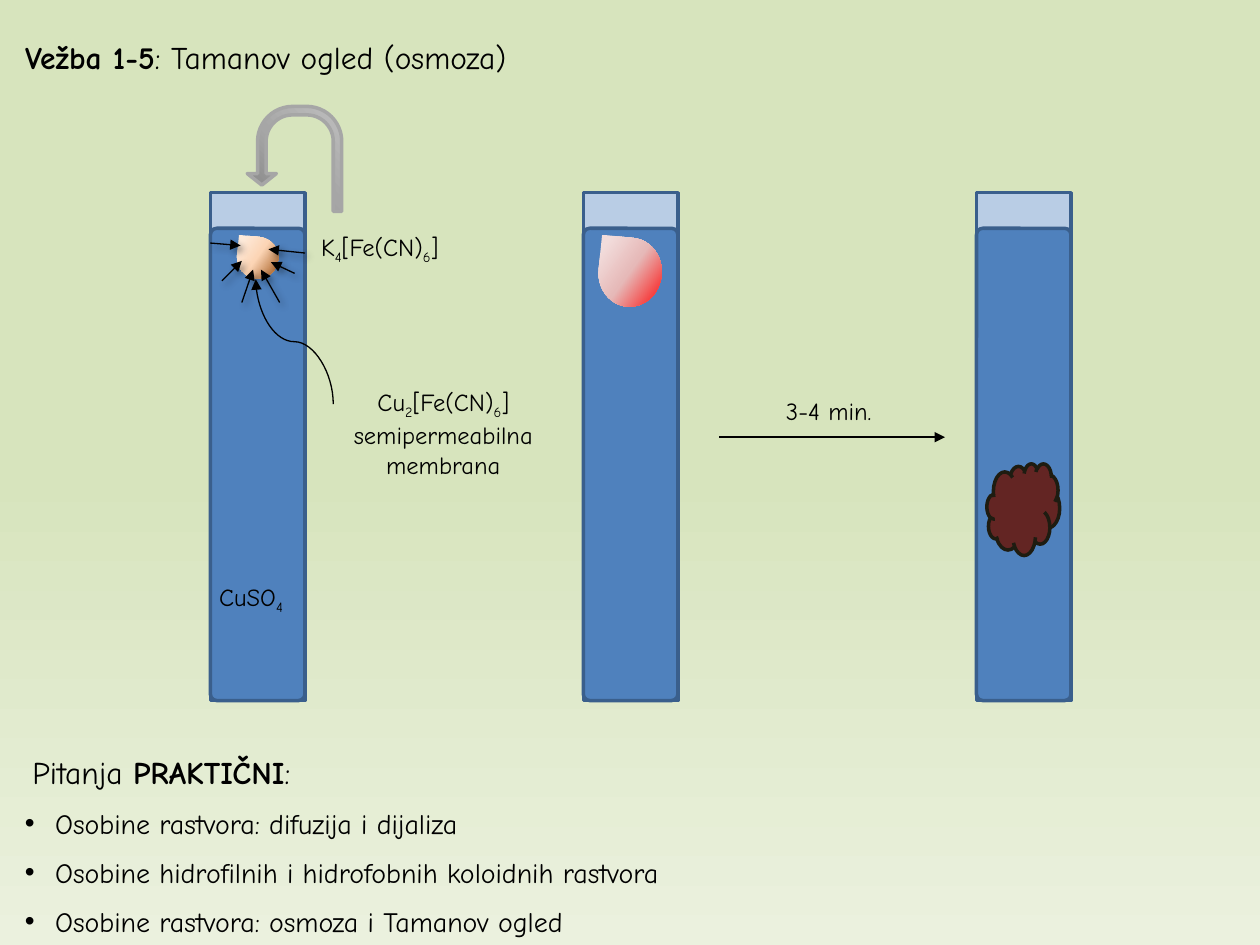
from dataclasses import dataclass

from lxml.etree import SubElement
from pptx import Presentation
from pptx.dml.color import RGBColor
from pptx.enum.shapes import MSO_CONNECTOR, MSO_SHAPE
from pptx.enum.text import MSO_ANCHOR, MSO_AUTO_SIZE, PP_ALIGN
from pptx.oxml.ns import qn
from pptx.util import Inches, Pt


@dataclass(frozen=True)
class Theme:
    """Colours, type sizes and line widths of the slide."""
    font: str = "Comic Neue"
    ink: str = "000000"
    heading: int = 18
    body: int = 16
    label: int = 14
    glass: str = "B9CDE5"
    liquid: str = "4F81BD"
    tube_line: str = "3A5F8C"
    clot: str = "632523"
    clot_line: str = "1E1C11"
    arrow_line: str = "A6A6A6"
    outline: float = 2
    thin: float = 0.75
    background: tuple = ((0, "EBF1DE"), (50, "D7E4BD"), (100, "D7E4BD"))
    fresh_drop: tuple = ((14, "FDEADA"), (50, "FCD5B5"), (100, "984807"))
    swollen_drop: tuple = ((14, "F2DCDB"), (50, "E6B9B8"), (100, "FF0000"))
    bent_arrow: tuple = ((0, "BFBFBF"), (50, "A6A6A6"), (100, "808080"))


THEME = Theme()
CELL = 0.25


@dataclass(frozen=True)
class Box:
    """A rectangle measured in cells of a 40 by 30 slide grid."""
    left: float
    top: float
    width: float
    height: float

    def point(self, x, y):
        """Return the slide position of a point given as shares of the box."""
        return Inches((self.left + x * self.width) * CELL), Inches((self.top + y * self.height) * CELL)

    def inner(self, x, y, width, height):
        """Return an inner box given as shares of this box."""
        return Box(self.left + x * self.width, self.top + y * self.height,
                   width * self.width, height * self.height)

    def frame(self):
        """Return left, top, width and height as lengths."""
        return tuple(Inches(cells * CELL) for cells in (self.left, self.top, self.width, self.height))


def apply(target, values):
    """Set every attribute named in a dict of format values."""
    for name, value in values.items():
        setattr(target, name, value)


def paint_gradient(fill, element, stops, angle):
    """Fill an element with a linear gradient, its angle clockwise."""
    fill.gradient()
    gradient = next(element.iter(qn("a:gradFill")))
    stop_list = gradient.find(qn("a:gsLst"))
    for stop in list(stop_list):
        stop_list.remove(stop)
    for position, color in stops:
        stop = SubElement(stop_list, qn("a:gs"), pos=str(position * 1000))
        SubElement(stop, qn("a:srgbClr"), val=color)
    gradient.find(qn("a:lin")).set("ang", str(angle * 60000))


def add_figure(slide, kind, box, fill, line=None, adjustments=(), angle=0, rotation=0):
    """Add a preset shape with a plain or gradient fill."""
    shape = slide.shapes.add_shape(kind, *box.frame())
    shape.shadow.inherit = False
    shape.rotation = rotation
    for index, value in enumerate(adjustments):
        shape.adjustments[index] = value
    if isinstance(fill, str):
        shape.fill.solid()
        shape.fill.fore_color.rgb = RGBColor.from_string(fill)
    else:
        paint_gradient(shape.fill, shape.element, fill, angle)
    if line:
        shape.line.color.rgb = RGBColor.from_string(line)
        shape.line.width = Pt(THEME.outline)
    else:
        shape.line.fill.background()
    return shape


def add_arrow(slide, start, end, width=THEME.thin, kind=MSO_CONNECTOR.STRAIGHT, shadow=False):
    """Add a connector with an arrowhead at its end."""
    arrow = slide.shapes.add_connector(kind, *start, *end)
    arrow.line.color.rgb = RGBColor.from_string(THEME.ink)
    arrow.line.width = Pt(width)
    properties = arrow.element.spPr
    SubElement(properties.find(qn("a:ln")), qn("a:tailEnd"), type="triangle")
    effects = SubElement(properties, qn("a:effectLst"))
    if shadow:
        outer = SubElement(effects, qn("a:outerShdw"), blurRad=str(Pt(4)), dist=str(Pt(3)),
                           dir=str(45 * 60000), rotWithShape="0")
        color = SubElement(outer, qn("a:srgbClr"), val=THEME.ink)
        SubElement(color, qn("a:alpha"), val="40000")
    return arrow


def write(frame, lines, size, align=PP_ALIGN.LEFT, anchor=MSO_ANCHOR.TOP, wrap=False):
    """Write lines of (text, style) runs into a text frame."""
    apply(frame, {"word_wrap": wrap, "vertical_anchor": anchor, "auto_size": MSO_AUTO_SIZE.NONE})
    for index, runs in enumerate(lines):
        paragraph = frame.paragraphs[0] if index == 0 else frame.add_paragraph()
        paragraph.alignment = align
        for text, style in runs:
            run = paragraph.add_run()
            run.text = text
            apply(run.font, {"name": THEME.font, "size": Pt(size), "bold": style == "bold"})
            run.font.color.rgb = RGBColor.from_string(THEME.ink)
            if style == "sub":
                run._r.get_or_add_rPr().set("baseline", "-25000")


def add_text(slide, box, lines, size=THEME.label, **options):
    """Add a text box and return its text frame."""
    frame = slide.shapes.add_textbox(*box.frame()).text_frame
    write(frame, lines, size, **options)
    return frame


def add_heading(slide, box):
    """Place and format the title placeholder."""
    title = slide.shapes.title
    apply(title, dict(zip(("left", "top", "width", "height"), box.frame())))
    write(title.text_frame, [[("Vežba 1-5", "bold"), (": Tamanov ogled (osmoza)", "")]], THEME.heading)


def add_questions(slide, box):
    """Add the question heading and its bulleted topics."""
    add_text(slide, box.inner(0.01, 0, 0.45, 0.26),
             [[("Pitanja ", ""), ("PRAKTIČNI", "bold"), (":", "")]], THEME.heading)
    topics = ("Osobine rastvora: difuzija i dijaliza",
              "Osobine hidrofilnih i hidrofobnih koloidnih rastvora",
              "Osobine rastvora: osmoza i Tamanov ogled")
    for row, topic in enumerate(topics):
        frame = add_text(slide, box.inner(0, 0.27 + row * 0.25, 1, 0.24), [[(topic, "")]], THEME.body,
                         align=PP_ALIGN.JUSTIFY, anchor=MSO_ANCHOR.MIDDLE, wrap=True)
        properties = frame.paragraphs[0]._p.get_or_add_pPr()
        properties.set("marL", str(Inches(0.24)))
        properties.set("indent", str(-Inches(0.24)))
        SubElement(properties, qn("a:buFont"), typeface="Arial")
        SubElement(properties, qn("a:buChar"), char="•")


def add_tube(slide, box):
    """Draw a filled test tube and return the square at the liquid's surface."""
    liquid = box.inner(0, 0.07, 1, 0.93)
    for body, color, corner in ((box, THEME.glass, 0), (liquid, THEME.liquid, 0.067)):
        add_figure(slide, MSO_SHAPE.ROUNDED_RECTANGLE, body, color, THEME.tube_line, [corner])
    return Box(liquid.left, liquid.top, box.width, box.width)


def add_drop(slide, box, stops):
    """Draw a drop hanging from the liquid's surface."""
    add_figure(slide, MSO_SHAPE.TEAR, box, stops, angle=120, rotation=275.8)


def add_start_tube(slide, box):
    """Draw the first tube: the added drop, inflow arrows and labels."""
    surface = add_tube(slide, box)
    drop = surface.inner(0.28, 0.09, 0.44, 0.44)
    add_drop(slide, drop, THEME.fresh_drop)
    inflows = (((1.64, 0.39), (0.76, 0.3)), ((1.39, 0.88), (0.82, 0.61)), ((1.03, 1.58), (0.58, 0.79)),
               ((-0.64, 0.15), (0.09, 0.21)), ((-0.36, 1.06), (0.12, 0.58)), ((0.12, 1.58), (0.39, 0.79)))
    for start, end in inflows:
        add_arrow(slide, drop.point(*start), drop.point(*end), shadow=True)
    add_text(slide, surface.inner(-0.04, 3.68, 1.07, 0.45), [[("CuSO", ""), ("4", "sub")]])
    cyanide = [("[Fe(CN)", ""), ("6", "sub"), ("]", "")]
    add_text(slide, surface.inner(1.04, -0.03, 1.69, 0.45), [[("K", ""), ("4", "sub"), *cyanide]])
    bent = add_figure(slide, MSO_SHAPE.U_TURN_ARROW, surface.inner(0.39, -1.29, 1, 1.11), THEME.bent_arrow,
                      THEME.arrow_line, (0.09, 0.154, 0.122, 0.371, 0.75), angle=45)
    bent.element.spPr.xfrm.set("flipH", "1")
    membrane = [[("Cu", ""), ("2", "sub"), *cyanide], [("semipermeabilna", "")], [("membrana", "")]]
    add_text(slide, surface.inner(1.27, 1.61, 2.39, 1.08), membrane, align=PP_ALIGN.CENTER, wrap=True)
    pointer = add_arrow(slide, surface.point(0.23, 1.61), surface.point(1.55, 0.79), kind=MSO_CONNECTOR.CURVE)
    pointer.element.spPr.xfrm.set("rot", str(270 * 60000))


def add_swollen_tube(slide, box):
    """Draw the second tube with its swollen drop."""
    surface = add_tube(slide, box)
    add_drop(slide, surface.inner(0.13, 0.13, 0.73, 0.67), THEME.swollen_drop)


def add_final_tube(slide, box):
    """Draw the last tube with the sunken clot."""
    surface = add_tube(slide, box)
    add_figure(slide, MSO_SHAPE.CLOUD, surface.inner(0.11, 2.49, 0.77, 0.97), THEME.clot, THEME.clot_line)


def add_waiting_time(slide, box):
    """Draw the time arrow along the bottom of the box and its label."""
    add_arrow(slide, box.point(0, 1), box.point(1, 1), width=1)
    add_text(slide, box.inner(0.24, 0, 0.53, 0.9), [[("3-4 min.", "")]])


def main():
    """Build and save the slide."""
    presentation = Presentation()
    apply(presentation, {"slide_width": Inches(40 * CELL), "slide_height": Inches(30 * CELL)})
    slide = presentation.slides.add_slide(presentation.slide_layouts[5])
    paint_gradient(slide.background.fill, slide.element, THEME.background, 270)
    add_heading(slide, Box(0.4, 1, 17.92, 1.6))
    add_questions(slide, Box(0.4, 23.72, 23.32, 6.2))
    for draw, left in ((add_start_tube, 6.68), (add_swollen_tube, 18.52), (add_final_tube, 31)):
        draw(slide, Box(left, 6.12, 3, 16.12))
    add_waiting_time(slide, Box(22.84, 12.36, 7.16, 1.52))
    presentation.save("out.pptx")


if __name__ == "__main__":
    main()
